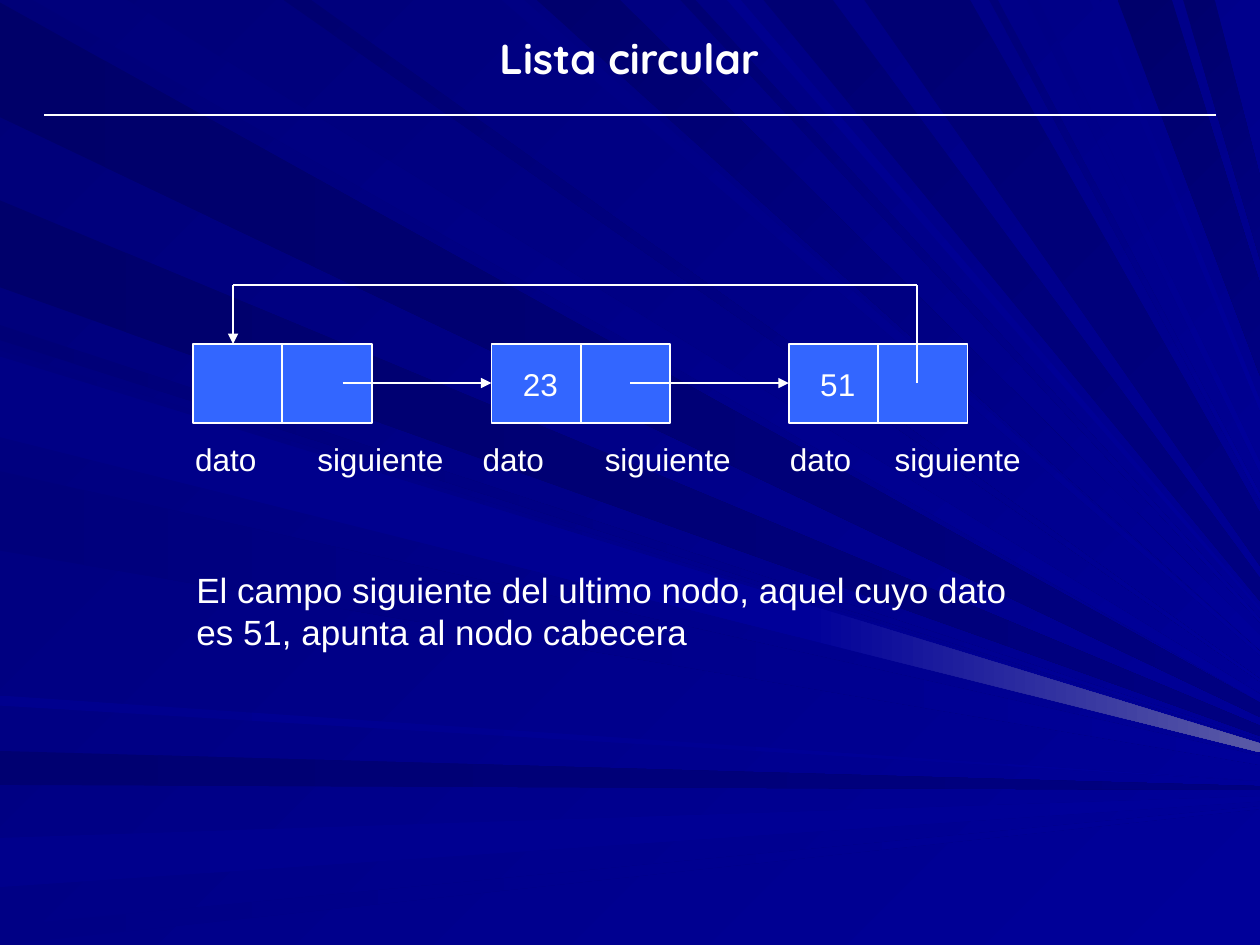
from lxml.etree import SubElement
from pptx import Presentation
from pptx.dml.color import RGBColor
from pptx.enum.shapes import MSO_CONNECTOR as Connector, MSO_SHAPE as Shape
from pptx.enum.text import MSO_ANCHOR as Anchor, MSO_AUTO_SIZE as AutoSize, PP_ALIGN as Align
from pptx.oxml.ns import qn
from pptx.util import Pt

PX = 9144  # 100 px to the inch
WIDTH, HEIGHT = 1000, 750
WHITE, BLUE = "FFFFFF", "3366FF"
DEEP, BRIGHT, GLINT = "000080", "000099", "5A5AA6"

FOCUS = (1125, 628)  # every ray runs towards this point
# Span on the edge, start colour, end colour
LEFT_RAYS = [
    (2, 93, "000069", DEEP),
    (596, 623, "000071", DEEP),
    (665, 704, "00008C", BRIGHT),
    (735, 750, "000085", BRIGHT),
    (258, 270, "000076", BRIGHT),
    (159, 228, "00006B", DEEP),
    (278, 342, "00007E", BRIGHT),
    (374, 437, "00007B", BRIGHT),
    (552, 560, "00008E", BRIGHT),
]
TOP_RAYS = [
    (26, 101, "00007B", BRIGHT),
    (398, 416, "000083", BRIGHT),
    (426, 492, "00006D", BRIGHT),
    (540, 552, "000073", BRIGHT),
    (606, 661, "000073", DEEP),
    (887, 930, "00006B", DEEP),
    (939, 964, "00006D", DEEP),
    (225, 247, "000070", BRIGHT),
    (577, 588, "00008E", BRIGHT),
    (686, 770, "000073", DEEP),
    (785, 792, "000078", BRIGHT),
    (815, 824, "000085", BRIGHT),
    (865, 872, "00008A", BRIGHT),
]


def rgb(value):
    return RGBColor.from_string(value)


def paint(fill, start, end=None, angle=0):
    """Fill with one colour, or with a gradient turned clockwise by angle."""
    if end is None:
        fill.solid()
        fill.fore_color.rgb = rgb(start)
        return
    fill.gradient()
    fill.gradient_angle = -angle % 360
    for stop, colour in zip(fill.gradient_stops, (start, end)):
        stop.color.rgb = rgb(colour)


def towards_focus(point, x):
    """Return where the line from point to the focus reaches x."""
    share = (x - point[0]) / (FOCUS[0] - point[0])
    return x, round(point[1] + share * (FOCUS[1] - point[1]))


def write(frame, text, size=18, font="Arial", bold=False, align=Align.LEFT,
          anchor=Anchor.TOP, inset=10, tab=None):
    """Put one paragraph in a frame; inset and tab are px from its left edge and its text."""
    frame.word_wrap = True
    frame.auto_size = AutoSize.NONE
    frame.vertical_anchor = anchor
    frame.margin_left = inset * PX
    paragraph = frame.paragraphs[0]
    paragraph.text = text
    paragraph.alignment = align
    if tab:
        tabs = SubElement(paragraph._p.get_or_add_pPr(), qn("a:tabLst"))
        SubElement(tabs, qn("a:tab"), pos=str(tab * PX), algn="l")
    for run in paragraph.runs:
        run.font.name, run.font.size, run.font.bold = font, Pt(size), bold
        run.font.color.rgb = rgb(WHITE)


class Canvas:
    """Holds the line style and the current slide."""

    def __init__(self, slide, line_colour=WHITE, line_width=1):
        self.slide = slide
        self.line_colour = line_colour
        self.line_width = line_width

    def outline(self, line):
        line.color.rgb = rgb(self.line_colour)
        line.width = Pt(self.line_width)

    def backdrop(self):
        """Open a group that lies behind everything else."""
        group = self.slide.shapes.add_group_shape()
        group.element.getparent().insert(2, group.element)
        return group

    def ray(self, group, first, second, start, end, angle=0, until=WIDTH):
        """Draw a wedge from two points towards the focus, cut off at until."""
        builder = group.shapes.build_freeform(*first, scale=PX)
        far_side = towards_focus(second, until), towards_focus(first, until)
        builder.add_line_segments([second, *far_side], close=True)
        shape = builder.convert_to_shape()
        shape.shadow.inherit = False
        shape.line.fill.background()
        paint(shape.fill, start, end, angle)

    def title(self, text, left, top, width, height, **style):
        title = self.slide.shapes.title
        title.left, title.top = left * PX, top * PX
        title.width, title.height = width * PX, height * PX
        write(title.text_frame, text, **style)

    def text(self, text, left, top, width, height, **style):
        box = self.slide.shapes.add_textbox(left * PX, top * PX, width * PX, height * PX)
        write(box.text_frame, text, **style)

    def line(self, start, end, arrow=False):
        points = [value * PX for value in (*start, *end)]
        connector = self.slide.shapes.add_connector(Connector.STRAIGHT, *points)
        self.outline(connector.line)
        properties = connector.element.spPr
        if arrow:
            SubElement(properties.find(qn("a:ln")), qn("a:tailEnd"), type="triangle")
        SubElement(properties, qn("a:effectLst"))

    def node(self, value, left, top, width, height):
        """Draw a list node: a box split into a data half and a link half."""
        box = self.slide.shapes.add_shape(
            Shape.RECTANGLE, left * PX, top * PX, width * PX, height * PX)
        box.shadow.inherit = False
        paint(box.fill, BLUE)
        self.outline(box.line)
        if value:
            write(box.text_frame, value, anchor=Anchor.MIDDLE, inset=25)
        middle = left + width // 2
        self.line((middle, top), (middle, top + height))


def draw_rays(canvas):
    group = canvas.backdrop()
    for low, high, start, end in LEFT_RAYS:
        canvas.ray(group, (0, low), (0, high), start, end)
    for low, high, start, end in TOP_RAYS:
        canvas.ray(group, (low, 0), (high, 0), start, end, angle=45)
    upper, lower, bend = (0, 283), (0, 347), 635
    canvas.ray(group, upper, lower, "000085", BRIGHT, until=bend)
    canvas.ray(group, towards_focus(upper, bend), towards_focus(lower, bend), BRIGHT, GLINT)


def main():
    presentation = Presentation()
    presentation.slide_width, presentation.slide_height = WIDTH * PX, HEIGHT * PX
    slide = presentation.slides.add_slide(presentation.slide_layouts[5])
    paint(slide.background.fill, "000078", BRIGHT, 45)

    canvas = Canvas(slide)
    draw_rays(canvas)
    canvas.title("Lista circular", 27, 21, 945, 150,
                 size=24, font="Quicksand", bold=True, align=Align.CENTER)
    canvas.line((35, 91), (965, 91))

    node_top, link_y, loop_y = 273, 304, 226
    for value, left in (("", 153), ("23", 390), ("51", 626)):
        canvas.node(value, left, node_top, 142, 63)
    for left, inset, tab in ((145, 10, 97), (366, 17, 97), (610, 17, 83)):
        canvas.text("dato\tsiguiente", left, 344, 236, 40, inset=inset, tab=tab)

    for start, end in ((272, 390), (500, 626)):
        canvas.line((start, link_y), (end, link_y), arrow=True)
    canvas.line((728, link_y), (728, loop_y))
    canvas.line((728, loop_y), (185, loop_y))
    canvas.line((185, loop_y), (185, node_top), arrow=True)

    canvas.text("El campo siguiente del ultimo nodo, aquel cuyo dato es 51, "
                "apunta al nodo cabecera", 146, 446, 677, 77, size=20)
    presentation.save("out.pptx")


if __name__ == "__main__":
    main()
